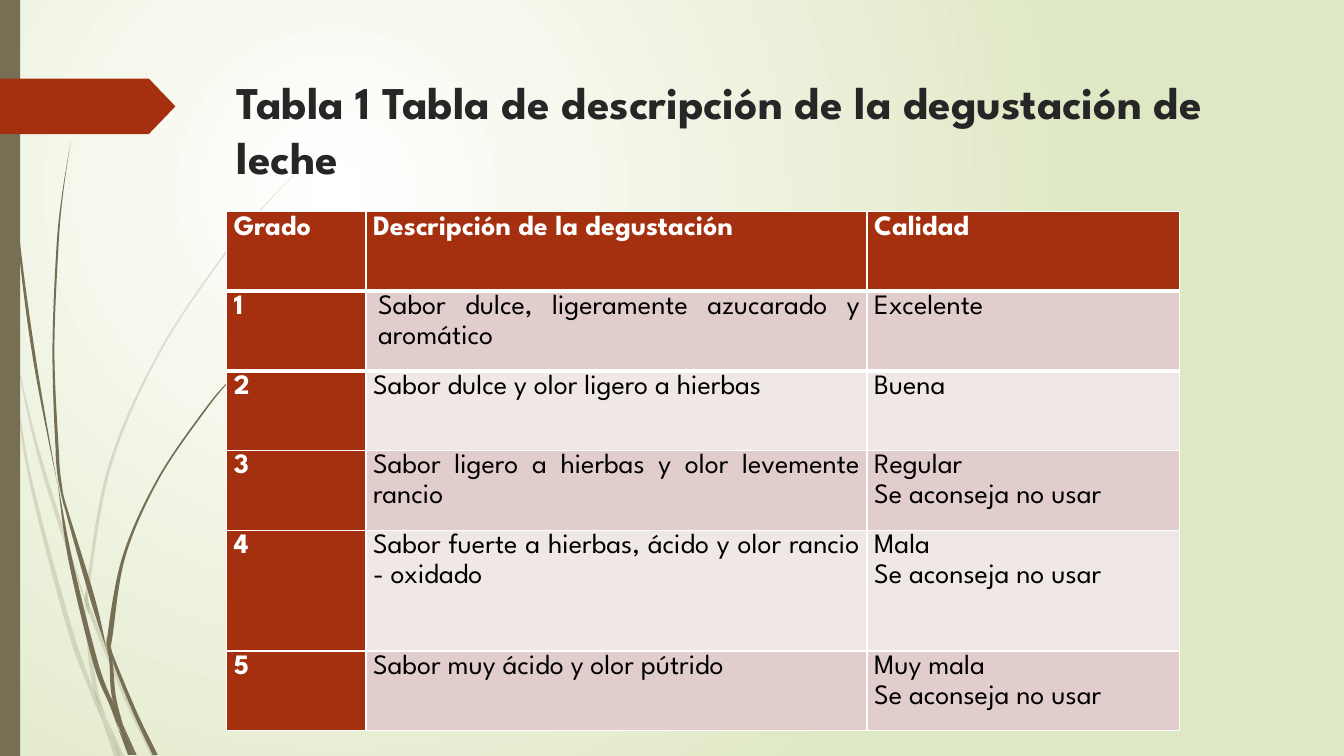
from lxml import etree
from pptx import Presentation
from pptx import util as u
from pptx.dml.color import RGBColor
from pptx.enum import shapes, text
from pptx.oxml.ns import qn

COLORS = {"olive": "766F54", "rust": "A53010", "ink": "262626", "black": "000000",
          "white": "FFFFFF", "sage": "DFE8C4", "rose": "E1CDCC", "blush": "F0E8E7"}

PALE_BLADES = [
    [(0, 2.9, .01), (.05, 3.13, .03), (.11, 3.5, 0)],
    [(.14, 3.45, 0), (.35, 4.38, .03), (.6, 5.21, .04), (.84, 5.95, .01)],
    [(.88, 5.98, .01), (.9, 6.08, .04), (1.25, 6.93, .04), (1.53, 7.51, .05)],
    [(1.05, 7.11, 0), (1.21, 7.51, .05)],
    [(.11, 3.5, 0), (.29, 4.7, .03), (.68, 6.2, .05), (.92, 6.88, .04), (1.01, 7.14, 0)],
    [(.84, 5.99, 0), (.89, 6.46, .04), (.95, 6.85, .04), (1.05, 7.11, 0)],
    [(3.12, 1.53, 0), (2.68, 1.98, .01), (2.28, 2.45, .02), (1.59, 3.48, .02),
     (1.09, 4.62, .03), (.87, 5.84, .03), (.87, 5.96, .02)],
    [(1.01, 7.14, 0), (1.16, 7.51, .05)],
    [(.85, 5.86, 0), (.86, 5.98, .04), (.88, 6.1, 0)],
    [(.93, 6.83, 0), (1.03, 7.13, .04), (1.19, 7.51, .01)],
]
DARK_BLADES = [
    [(.04, 0, .01), (.08, 1.1, .01), (.18, 2.33, .02), (.34, 3.55, .03), (.57, 4.81, 0)],
    [(.6, 4.72, 0), (.63, 4.95, .02), (.91, 5.91, .05), (1.06, 6.45, 0)],
    [(1.1, 6.41, 0), (1.12, 6.53, .03), (1.34, 7.07, .04), (1.54, 7.49, .05)],
    [(.57, 4.77, 0), (.7, 5.56, .04), (.95, 6.58, .05), (1.11, 7, .04), (1.17, 7.22, 0)],
    [(.7, 1.41, 0), (.62, 1.93, .01), (.57, 2.45, .02), (.53, 3.49, .02),
     (.57, 4.51, .03), (.6, 4.72, 0)],
    [(1.22, 7.19, 0), (1.34, 7.49, .03)],
    [(.55, 4.49, 0), (.59, 4.75, .03), (.64, 5.05, 0)],
    [(2.61, 3.44, 0), (2.31, 3.74, .01), (2.04, 4.06, .02), (1.57, 4.75, .02),
     (1.23, 5.52, .03), (1.09, 6.32, .05), (1.1, 6.41, 0)],
    [(1.17, 7.22, 0), (1.29, 7.49, .04)],
    [(1.06, 6.45, 0), (1.1, 6.56, .03), (1.13, 6.91, .04), (1.22, 7.19, 0)],
    [(1.06, 6.31, 0), (1.08, 6.43, .04), (1.11, 6.56, 0)],
    [(1.1, 6.91, 0), (1.19, 7.18, .05), (1.31, 7.49, .03)],
]

ADVICE = "Se aconseja no usar"
GRADES = [
    ("Grado", "Descripción de la degustación", "Calidad"),
    ("1", "Sabor dulce, ligeramente azucarado y aromático", "Excelente"),
    ("2", "Sabor dulce y olor ligero a hierbas", "Buena"),
    ("3", "Sabor ligero a hierbas y olor levemente rancio", f"Regular\n{ADVICE}"),
    ("4", "Sabor fuerte a hierbas, ácido y olor rancio - oxidado", f"Mala\n{ADVICE}"),
    ("5", "Sabor muy ácido y olor pútrido", f"Muy mala\n{ADVICE}"),
]


def with_handles(blade):
    """Return the blade's points with two Bézier handles between each pair."""
    padded = [blade[0], *blade, blade[-1]]
    curve = [blade[0]]
    for a, b, c, d in zip(padded, padded[1:], padded[2:], padded[3:]):
        curve.append(tuple(q + (r - p) / 6 for p, q, r in zip(a, b, c)))
        curve.append(tuple(r - (s - q) / 6 for q, r, s in zip(b, c, d)))
        curve.append(c)
    return curve


class SlideBuilder:
    """Holds the style and the current slide."""

    font_name = "League Spartan"

    def __init__(self, slide):
        self.slide = slide

    def color(self, name):
        return RGBColor.from_string(COLORS[name])

    def paint(self, shape, color):
        shape.shadow.inherit = False
        shape.fill.solid()
        shape.fill.fore_color.rgb = self.color(color)
        shape.line.fill.background()

    def style(self, paragraph, size, color, bold):
        font = paragraph.font
        font.name, font.size, font.bold = self.font_name, u.Pt(size), bold
        font.color.rgb = self.color(color)

    def background(self, inner, outer):
        fill = self.slide.background.fill
        fill.gradient()
        for stop, name in zip(fill.gradient_stops, (inner, outer)):
            stop.color.rgb = self.color(name)
        gradient = next(self.slide.element.iter(qn("a:gradFill")))
        gradient.remove(gradient.find(qn("a:lin")))
        circle = etree.SubElement(gradient, qn("a:path"), path="circle")
        etree.SubElement(circle, qn("a:fillToRect"), l="50000", t="50000", r="100000", b="100000")

    def blade(self, blade, opacity=100):
        curve = with_handles(blade)
        edges = [(x - w / 2, y) for x, y, w in curve]
        edges += [(x + w / 2, y) for x, y, w in reversed(curve)]
        points = [(u.Inches(x), u.Inches(y)) for x, y in edges]
        builder = self.slide.shapes.build_freeform(*points[0])
        builder.add_line_segments(points[1:], close=True)
        leaf = builder.convert_to_shape()
        self.paint(leaf, "olive")
        lines = list(leaf.element.iter(qn("a:lnTo")))
        side = len(curve) - 1
        for first in [*range(0, side, 3), *range(side + 1, 2 * side + 1, 3)]:
            bezier = etree.Element(qn("a:cubicBezTo"))
            lines[first].addprevious(bezier)
            for line in lines[first:first + 3]:
                bezier.append(line[0])
                line.getparent().remove(line)
        if opacity < 100:
            tint = leaf.fill._xPr.find(qn("a:solidFill"))[0]
            etree.SubElement(tint, qn("a:alpha"), val=str(opacity * 1000))

    def shape(self, kind, left, top, width, height, color):
        shape = self.slide.shapes.add_shape(
            kind, u.Inches(left), u.Inches(top), u.Inches(width), u.Inches(height))
        self.paint(shape, color)
        return shape

    def title(self, words, left, top, width, height):
        title = self.slide.shapes.title
        title.left, title.top = u.Inches(left), u.Inches(top)
        title.width, title.height = u.Inches(width), u.Inches(height)
        frame = title.text_frame
        frame.text = words
        frame.word_wrap = True
        frame.auto_size = text.MSO_AUTO_SIZE.NONE
        frame.vertical_anchor = text.MSO_ANCHOR.TOP
        frame.paragraphs[0].alignment = text.PP_ALIGN.LEFT
        self.style(frame.paragraphs[0], 32.4, "ink", True)

    def cell(self, cell, words, fill, color, bold):
        cell.fill.solid()
        cell.fill.fore_color.rgb = self.color(fill)
        cell.margin_left = cell.margin_right = u.Inches(0.07)
        cell.margin_top = cell.margin_bottom = 0
        cell.text = words
        for paragraph in cell.text_frame.paragraphs:
            paragraph.alignment = text.PP_ALIGN.JUSTIFY
            paragraph.line_spacing = 1.15
            self.style(paragraph, 20, color, bold)

    def border(self, cell, side, points):
        line = etree.Element(qn(f"a:{side}"), w=str(u.Pt(points)))
        fill = etree.SubElement(line, qn("a:solidFill"))
        etree.SubElement(fill, qn("a:srgbClr"), val=COLORS["white"])
        cell._tc.get_or_add_tcPr().insert(0, line)

    def table(self, rows, left, top, widths, heights):
        table = self.slide.shapes.add_table(
            len(rows), len(widths), u.Inches(left), u.Inches(top),
            u.Inches(sum(widths)), u.Inches(sum(heights))).table
        table.first_col = True
        for column, width in zip(table.columns, widths):
            column.width = u.Inches(width)
        for i, (row, height) in enumerate(zip(rows, heights)):
            table.rows[i].height = u.Inches(height)
            for j, words in enumerate(row):
                heading = i == 0 or j == 0
                fill = "rust" if heading else ("blush", "rose")[i % 2]
                color = "white" if heading else "black"
                self.cell(table.cell(i, j), words, fill, color, heading)
        for j in range(len(widths)):
            self.border(table.cell(0, j), "lnB", 3)
            self.border(table.cell(1, j), "lnT", 3)
        return table


def main():
    deck = Presentation()
    deck.slide_width, deck.slide_height = u.Inches(13.33), u.Inches(7.5)
    page = SlideBuilder(deck.slides.add_slide(deck.slide_layouts[5]))
    page.background("white", "sage")
    for blade in PALE_BLADES:
        page.blade(blade, opacity=20)
    for blade in DARK_BLADES:
        page.blade(blade)
    page.shape(shapes.MSO_SHAPE.RECTANGLE, 0, 0, 0.2, 7.5, "olive")
    arrow = page.shape(shapes.MSO_SHAPE.PENTAGON, 0, 0.78, 1.74, 0.55, "rust")
    arrow.adjustments[0] = 0.48
    page.title("Tabla 1 Tabla de descripción de la degustación de leche", 2.25, 0.69, 10.34, 0.61)
    grades = page.table(GRADES, 2.25, 2.1, [1.38, 4.97, 3.1], [0.79] * 4 + [1.2, 0.79])
    sweet = grades.cell(1, 1).text_frame.paragraphs[0]
    sweet._p.get_or_add_pPr().set("marL", str(u.Inches(0.05)))
    deck.save("out.pptx")


if __name__ == "__main__":
    main()
